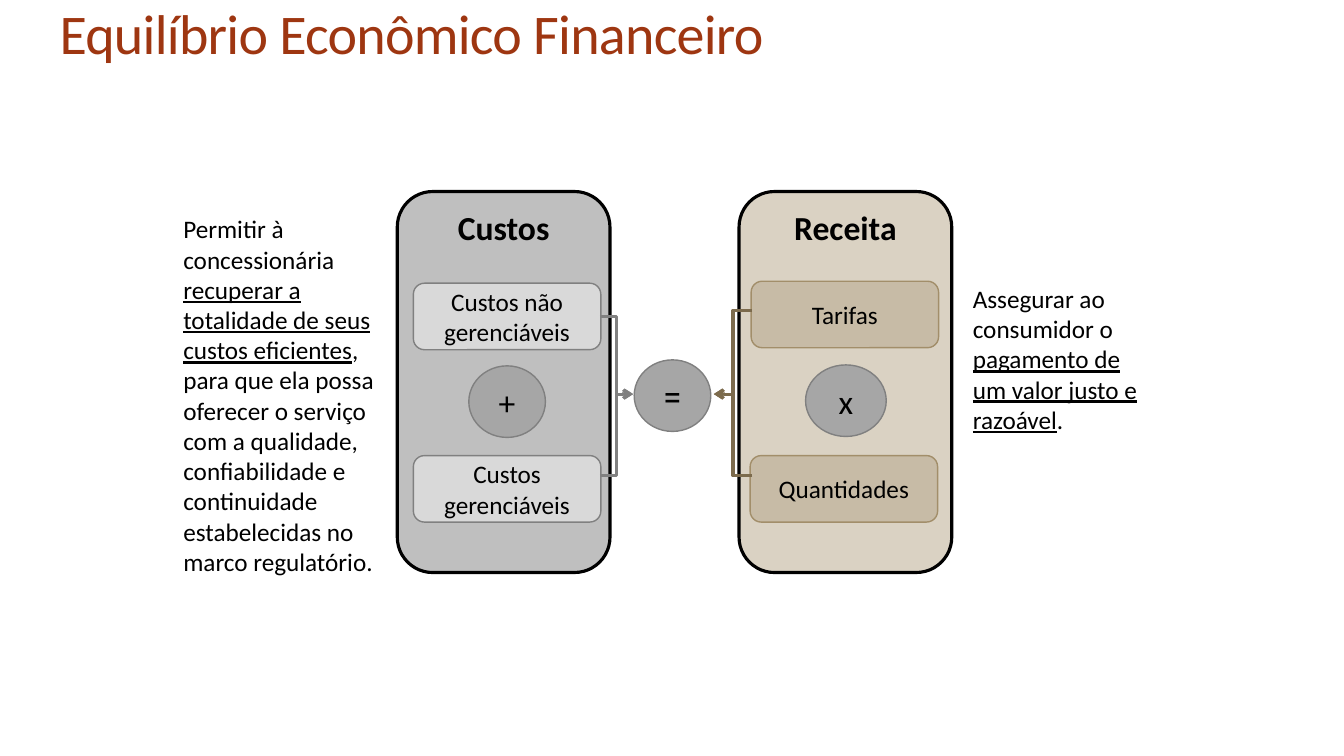
from lxml import etree
from pptx import Presentation
from pptx.dml.color import RGBColor
from pptx.enum.shapes import MSO_CONNECTOR as Link, MSO_SHAPE as Geo
from pptx.enum.text import MSO_ANCHOR as Anchor, MSO_AUTO_SIZE as Fit, PP_ALIGN as Align
from pptx.oxml.ns import qn
from pptx.util import Inches, Pt

COLORS = {
    "title": "9E3611", "black": "000000", "grey": "808080", "disc": "A6A6A6",
    "cost": "BFBFBF", "cost_item": "D9D9D9",
    "income": "DAD2C3", "income_item": "C7BBA6", "tan": "A28E6A", "brown": "7C6B4D",
}


def rgb(name):
    return RGBColor.from_string(COLORS[name])


def style(para, size, color="black", face="Calibri", bold=False):
    font = para.font
    font.name, font.size, font.bold = face, Pt(size), bold
    font.color.rgb = rgb(color)


def add_title(slide, text):
    title = slide.shapes.title
    title.left, title.top = Inches(0.49), Inches(0.01)
    title.width, title.height = Inches(12.38), Inches(0.43)
    frame = title.text_frame
    frame.auto_size, frame.vertical_anchor = Fit.NONE, Anchor.TOP
    frame.margin_top = Inches(0.08)
    para = frame.paragraphs[0]
    para.alignment, para.line_spacing = Align.LEFT, 0.85
    style(para, 40, "title")
    run = para.add_run()
    run.text = text
    run._r.get_or_add_rPr().set("spc", "-50")


def add_node(slide, geo, box, text, fill, line, size, weight=1,
             anchor=Anchor.MIDDLE, face="Calibri", bold=False):
    node = slide.shapes.add_shape(geo, *map(Inches, box))
    node.shadow.inherit = False
    node.fill.solid()
    node.fill.fore_color.rgb = rgb(fill)
    node.line.color.rgb = rgb(line)
    node.line.width = Pt(weight)
    frame = node.text_frame
    frame.word_wrap, frame.vertical_anchor = True, anchor
    para = frame.paragraphs[0]
    para.alignment = Align.CENTER
    style(para, size, face=face, bold=bold)
    para.add_run().text = text


def add_panel(slide, left, text, fill):
    add_node(slide, Geo.ROUNDED_RECTANGLE, (left, 1.9, 2.11, 3.78), text, fill,
             "black", 24, 2.25, Anchor.TOP, bold=True)


def add_item(slide, left, top, text, fill, line):
    add_node(slide, Geo.ROUNDED_RECTANGLE, (left, top, 1.86, 0.66), text, fill, line, 18)


def add_sign(slide, left, top, width, text, face="Calibri"):
    add_node(slide, Geo.OVAL, (left, top, width, 0.71), text, "disc", "grey", 24, face=face)


def add_note(slide, box, before, key, after):
    """Add a paragraph whose key phrase is underlined."""
    frame = slide.shapes.add_textbox(*map(Inches, box)).text_frame
    frame.word_wrap, frame.auto_size = True, Fit.SHAPE_TO_FIT_TEXT
    para = frame.paragraphs[0]
    style(para, 18)
    for text in (before, key, after):
        run = para.add_run()
        run.text = text
        if text == key:
            run.font.underline = True


def add_elbow(slide, start, end, color):
    link = slide.shapes.add_connector(Link.ELBOW, *map(Inches, start + end))
    link.line.color.rgb = rgb(color)
    link.line.width = Pt(2.25)
    etree.SubElement(link.line._get_or_add_ln(), qn("a:tailEnd"), type="arrow")
    etree.SubElement(link._element.spPr, qn("a:effectLst"))


def main():
    deck = Presentation()
    deck.slide_width, deck.slide_height = Inches(13.33), Inches(7.5)
    slide = deck.slides.add_slide(deck.slide_layouts[5])
    add_title(slide, "Equilíbrio Econômico Financeiro")

    add_panel(slide, 3.94, "Custos", "cost")
    add_panel(slide, 7.33, "Receita", "income")
    add_item(slide, 4.1, 2.81, "Custos não gerenciáveis", "cost_item", "grey")
    add_item(slide, 4.1, 4.52, "Custos gerenciáveis", "cost_item", "grey")
    add_item(slide, 7.45, 2.79, "Tarifas", "income_item", "tan")
    add_item(slide, 7.44, 4.52, "Quantidades", "income_item", "tan")
    add_sign(slide, 4.65, 3.63, 0.76, "+")
    add_sign(slide, 6.29, 3.57, 0.76, "=", "Roboto")
    add_sign(slide, 7.99, 3.62, 0.8, "x")

    add_note(slide, (1.72, 2.07, 2.14, 3.74), "Permitir à concessionária ",
             "recuperar a totalidade de seus custos eficientes",
             ", para que ela possa oferecer o serviço com a qualidade, confiabilidade "
             "e continuidade estabelecidas no marco regulatório.")
    add_note(slide, (9.55, 2.76, 1.88, 1.62), "Assegurar ao consumidor o ",
             "pagamento de um valor justo e razoável", ".")

    for left, tops, end, color in ((5.95, (4.72, 3.14), 6.28, "grey"),
                                   (7.46, (3.08, 4.72), 7.08, "brown")):
        for top in tops:
            add_elbow(slide, (left, top), (end, 3.91), color)
    deck.save("out.pptx")


if __name__ == "__main__":
    main()
